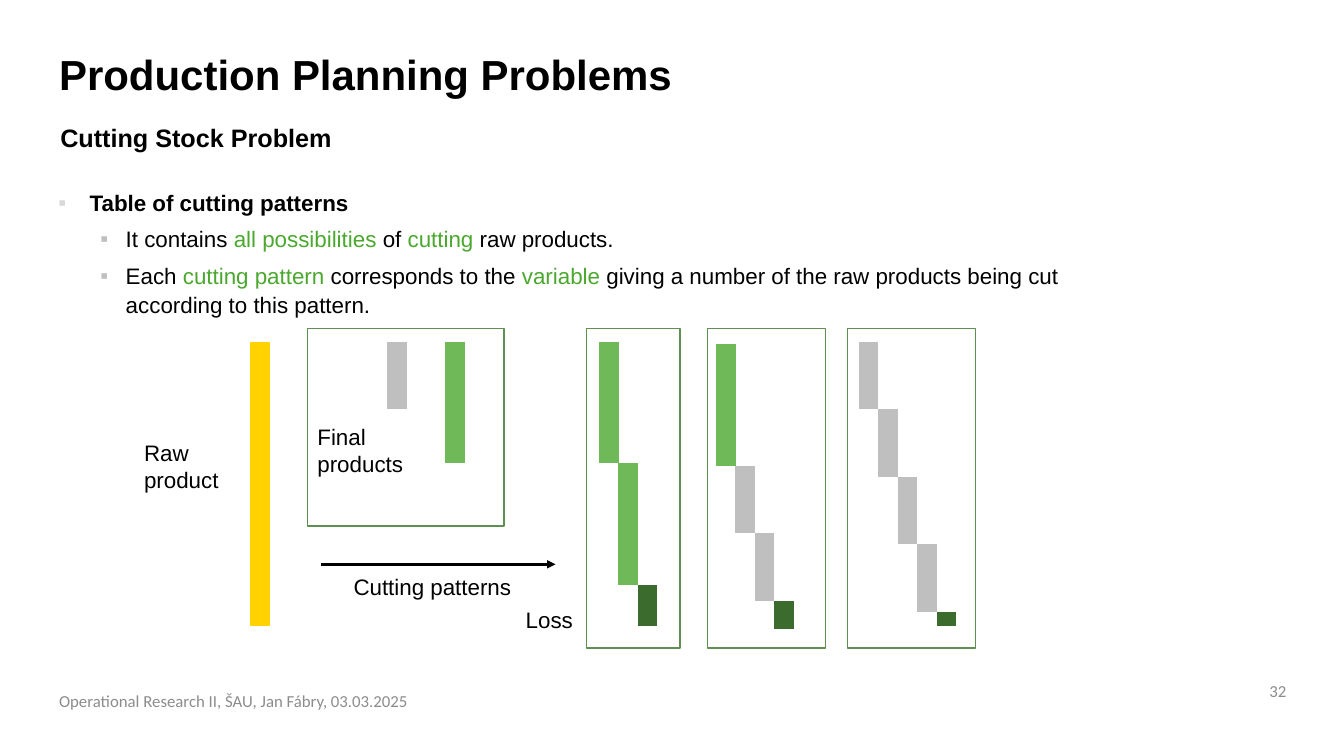
from lxml import etree
from pptx import Presentation
from pptx.dml.color import RGBColor
from pptx.enum import shapes, text
from pptx.oxml import ns
from pptx.util import Cm, Pt

COLORS = {
    "black": "000000", "foot": "8C8C8C", "accent": "4BA82E",
    "raw": "FFD200", "short": "BFBFBF", "long": "6FB958",
    "loss": "3B6B2D", "frame": "5F9051",
}


def add_text(box, words, size=16, color="black", font="Arial", bold=False):
    """Add a text box; box is left, top, width, height in cm."""
    frame = slide.shapes.add_textbox(*map(Cm, box)).text_frame
    frame.word_wrap = True
    frame.text = words
    for run in frame.paragraphs[0].runs:
        run.font.size, run.font.name, run.font.bold = Pt(size), font, bold
        run.font.color.rgb = RGBColor.from_string(COLORS[color])
    return frame


def add_line(x1, y1, x2, y2, color, width):
    line = slide.shapes.add_connector(
        shapes.MSO_CONNECTOR.STRAIGHT, Cm(x1), Cm(y1), Cm(x2), Cm(y2))
    line.line.color.rgb = RGBColor.from_string(COLORS[color])
    line.line.width = Pt(width)
    etree.SubElement(line._element.spPr, ns.qn("a:effectLst"))
    return line


deck = Presentation()
deck.slide_width, deck.slide_height = Cm(33.87), Cm(19.05)
slide = deck.slides.add_slide(deck.slide_layouts[6])

# Headings and footer
title = add_text((1.24, 1.24, 25.73, 1.45), "Production Planning Problems", 30, bold=True)
title.paragraphs[0].line_spacing = 0.9
add_text((1.27, 2.97, 25.68, 1.02), "Cutting Stock Problem", 18, bold=True)
foot = add_text((1.24, 17.15, 18.21, 1.02),
                "Operational Research II, ŠAU, Jan Fábry, 03.03.2025", 12, "foot", "Calibri")
number = add_text((31.07, 16.99, 1.6, 0.84), "32", 12, "foot", "Calibri")
number.paragraphs[0].alignment = text.PP_ALIGN.RIGHT
for frame in (foot, number):
    frame.vertical_anchor = text.MSO_ANCHOR.MIDDLE

# Bullets: every second part of a line is accented
bullets = [
    (0, ["Table of cutting patterns"]),
    (1, ["It contains ", "all possibilities", " of ", "cutting", " raw products."]),
    (1, ["Each ", "cutting pattern", " corresponds to the ", "variable",
         " giving a number of the raw products being cut according to this pattern."]),
]
levels = [(0.79, -0.79, "D9D9D9"), (1.7, -0.64, "BFBFBF")]
body = slide.shapes.add_textbox(Cm(1.22), Cm(4.57), Cm(25.73), Cm(10.49)).text_frame
body.word_wrap = True
for index, (level, parts) in enumerate(bullets):
    para = body.add_paragraph() if index else body.paragraphs[0]
    margin, indent, shade = levels[level]
    para.level = level
    props = para._p.get_or_add_pPr()
    props.set("marL", str(Cm(margin)))
    props.set("indent", str(Cm(indent)))
    tint = etree.SubElement(props, ns.qn("a:buClr"))
    etree.SubElement(tint, ns.qn("a:srgbClr"), val=shade)
    etree.SubElement(props, ns.qn("a:buFont"), typeface="Arial")
    etree.SubElement(props, ns.qn("a:buChar"), char="▪")
    para.line_spacing = 1.1
    if index:
        para.space_before = Pt(5)
    for place, part in enumerate(parts):
        run = para.add_run()
        run.text = part
        run.font.size, run.font.name, run.font.bold = Pt(16), "Arial", level == 0
        color = "accent" if place % 2 else "black"
        run.font.color.rgb = RGBColor.from_string(COLORS[color])

# Frames around the final products and the three patterns
for left, width, height in [(7.75, 4.95, 4.98), (14.78, 2.36, 8.05),
                            (17.83, 2.97, 8.05), (21.36, 3.23, 8.05)]:
    rect = slide.shapes.add_shape(shapes.MSO_SHAPE.RECTANGLE,
                                  Cm(left), Cm(8.28), Cm(width), Cm(height))
    rect.shadow.inherit = False
    rect.fill.background()
    rect.line.color.rgb = RGBColor.from_string(COLORS["frame"])
    rect.line.width = Pt(1)

# Bars: each pattern steps right and down, and its loss is what is left of the raw
TOP, STEP, BAR = 8.61, 0.49, 14
sizes = {"raw": 7.16, "short": 1.7, "long": 3.06}
for x, kind in [(6.55, "raw"), (10, "short"), (11.46, "long")]:
    add_line(x, TOP, x, TOP + sizes[kind], kind, BAR)

patterns = [
    (15.34, TOP, ["long"] * 2),
    (18.29, TOP + 0.07, ["long"] + ["short"] * 2),
    (21.89, TOP, ["short"] * 4),
]
for x, y, cuts in patterns:
    sizes["loss"] = sizes["raw"] - sum(sizes[cut] for cut in cuts)
    for cut in cuts + ["loss"]:
        add_line(x, y, x, y + sizes[cut], cut, BAR)
        x, y = x + STEP, y + sizes[cut]

# Arrow and labels
arrow = add_line(8.08, 14.22, 14, 14.22, "black", 2)
etree.SubElement(arrow.line._get_or_add_ln(), ns.qn("a:tailEnd"), type="triangle")
for box, words in [
    ((3.38, 10.95, 3.12, 1.63), "Raw\vproduct"),
    ((7.75, 10.54, 3.66, 1.63), "Final\vproducts"),
    ((8.66, 14.33, 5.21, 0.94), "Cutting patterns"),
    ((13, 15.16, 2.51, 0.94), "Loss"),
]:
    add_text(box, words)

deck.save("out.pptx")
